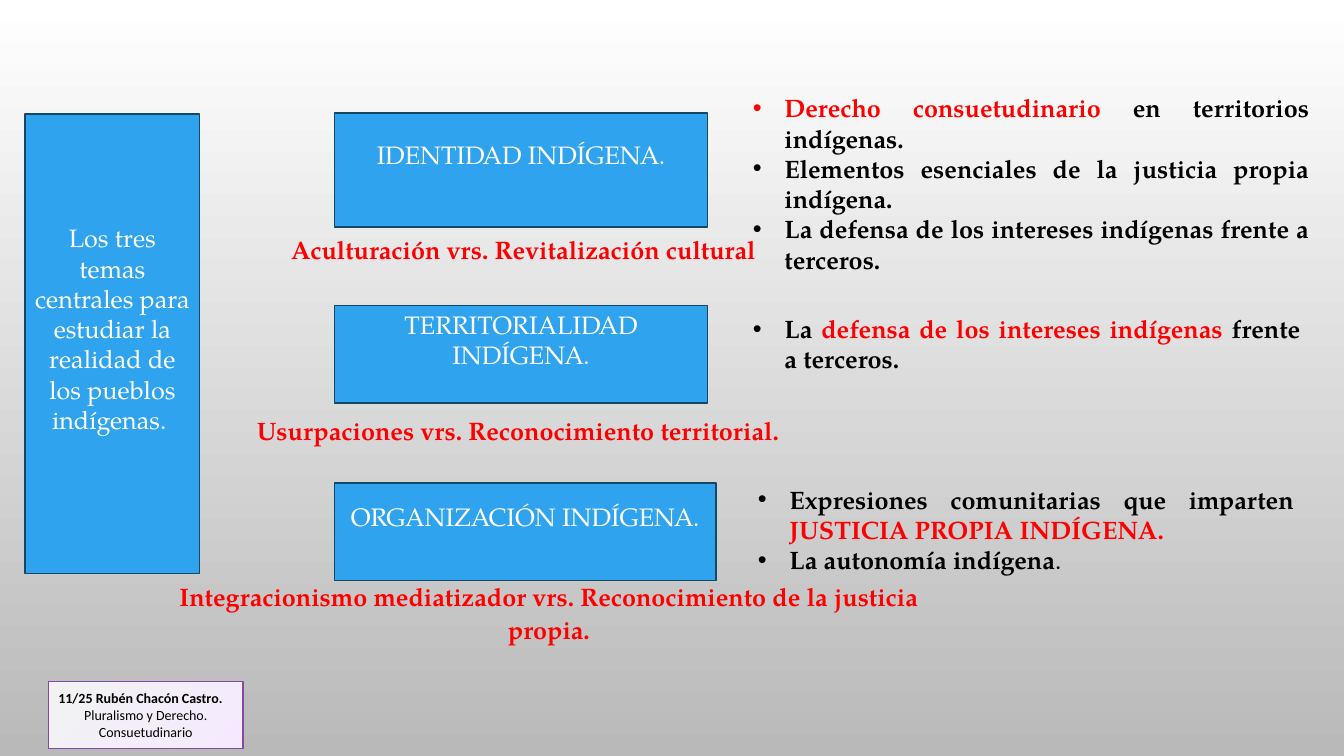
from lxml import etree
from pptx import Presentation
from pptx.dml.color import RGBColor
from pptx.enum.shapes import MSO_SHAPE
from pptx.enum.text import MSO_ANCHOR, MSO_AUTO_SIZE, PP_ALIGN
from pptx.oxml.ns import qn
from pptx.util import Pt

RECTANGLE = MSO_SHAPE.RECTANGLE
TOP, MIDDLE = MSO_ANCHOR.TOP, MSO_ANCHOR.MIDDLE
LEFT, CENTER, JUSTIFY = PP_ALIGN.LEFT, PP_ALIGN.CENTER, PP_ALIGN.JUSTIFY
NO_AUTOFIT = MSO_AUTO_SIZE.NONE

WHITE = RGBColor(0xFF, 0xFF, 0xFF)
BLACK = RGBColor(0, 0, 0)
RED = RGBColor(0xFF, 0, 0)
GRAY = RGBColor(0xB9, 0xB9, 0xB9)
BLUE = RGBColor(0x2F, 0xA3, 0xEE)
NAVY = RGBColor(0x15, 0x47, 0x68)
PALE_GRAY = RGBColor(0xF2, 0xF2, 0xF2)
LILAC = RGBColor(0xF4, 0xE9, 0xFF)
PURPLE = RGBColor(0x83, 0x4A, 0xA7)

SERIF, SANS = "TeX Gyre Pagella", "Calibri"
LINE_HEIGHT = 21.6  # one 18 pt line of the serif font
INDENT = 22.5


def add_runs(paragraph, runs, size=18, name=SERIF):
    for text, color, bold in runs:
        run = paragraph.add_run()
        run.text = text
        run.font.color.rgb = color
        for key, value in {"size": Pt(size), "name": name, "bold": bold}.items():
            setattr(run.font, key, value)


def set_gradient(fill, angle, colors):
    fill.gradient()
    fill.gradient_angle = angle
    for stop, color, position in zip(fill.gradient_stops, colors, (0, 1)):
        stop.color.rgb = color
        stop.position = position


presentation = Presentation()
presentation.slide_width, presentation.slide_height = Pt(960), Pt(540)
comparison_layout = presentation.slide_layouts[4]
slide = presentation.slides.add_slide(comparison_layout)
set_gradient(slide.background.fill, 270, (WHITE, GRAY))

# Bulleted lists on the right, in the body placeholders
lists = [
    (1, (530.6, 62.6, 411.8, 138.2), [
        [("Derecho consuetudinario ", RED, True),
         ("en territorios indígenas.", BLACK, True)],
        [("Elementos esenciales de la justicia propia indígena.", BLACK, True)],
        [("La defensa de los intereses indígenas frente a terceros.", BLACK, True)],
    ]),
    (2, (530.6, 220.3, 405.4, 51), [
        [("La ", BLACK, True),
         ("defensa de los intereses indígenas ", RED, True),
         ("frente a terceros.", BLACK, True)],
    ]),
    (3, (534.2, 342, 397.4, 72.7), [
        [("Expresiones comunitarias que imparten ", BLACK, True),
         ("JUSTICIA PROPIA INDÍGENA.", RED, True)],
        [("La autonomía indígena", BLACK, True), (".", BLACK, False)],
    ]),
]
placeholders = {shape.placeholder_format.idx: shape for shape in slide.placeholders}
for index, box, items in lists:
    shape = placeholders.pop(index)
    shape.left, shape.top, shape.width, shape.height = map(Pt, box)
    frame = shape.text_frame
    frame.auto_size = NO_AUTOFIT
    frame.vertical_anchor = TOP
    for number, runs in enumerate(items):
        paragraph = frame.paragraphs[0] if number == 0 else frame.add_paragraph()
        properties = paragraph._p.get_or_add_pPr()
        properties.set("marL", str(Pt(INDENT)))
        properties.set("indent", str(-Pt(INDENT)))
        etree.SubElement(properties, qn("a:buFont"), typeface="Arial")
        etree.SubElement(properties, qn("a:buChar"), char="•")
        paragraph.alignment = JUSTIFY
        paragraph.space_before = Pt(0)
        add_runs(paragraph, runs)
for unused in placeholders.values():
    unused.element.getparent().remove(unused.element)

# Blue boxes: main topic and the three themes
blue_boxes = [
    ((18, 81.4, 124.6, 328.3),
     "Los tres temas centrales para estudiar la realidad de los pueblos indígenas. "),
    ((239, 80.6, 266.4, 81.4), "IDENTIDAD INDÍGENA."),
    ((239, 218.2, 266.4, 69.8), "TERRITORIALIDAD INDÍGENA."),
    ((239, 344.9, 272.2, 69.8), "ORGANIZACIÓN INDÍGENA."),
]
for box, text in blue_boxes:
    shape = slide.shapes.add_shape(RECTANGLE, *map(Pt, box))
    shape.shadow.inherit = False
    shape.fill.solid()
    shape.fill.fore_color.rgb = BLUE
    shape.line.color.rgb = NAVY
    shape.line.width = Pt(1.25)
    frame = shape.text_frame
    frame.word_wrap = True
    frame.vertical_anchor = MIDDLE
    frame.margin_bottom = Pt(3.6 + LINE_HEIGHT)  # lifts the text half a line
    frame.paragraphs[0].alignment = CENTER
    add_runs(frame.paragraphs[0], [(text, WHITE, False)])

# Red captions under the themes
captions = [
    ((200.9, 162, 357.1, 29.5), LEFT, "Aculturación vrs. Revitalización cultural"),
    ((176.4, 291.6, 397.4, 29.5), LEFT, "Usurpaciones vrs. Reconocimiento territorial."),
    ((103.7, 410.4, 576.7, 53.3), CENTER,
     "Integracionismo mediatizador vrs. Reconocimiento de la justicia propia."),
]
for box, alignment, text in captions:
    frame = slide.shapes.add_textbox(*map(Pt, box)).text_frame
    frame.word_wrap = True
    paragraph = frame.paragraphs[0]
    paragraph.alignment = alignment
    paragraph.line_spacing = 1.07
    add_runs(paragraph, [(text, RED, True)])

# Author label
label = slide.shapes.add_shape(RECTANGLE, Pt(34.6), Pt(486.7), Pt(139), Pt(48.2))
label.shadow.inherit = False
set_gradient(label.fill, 315, (PALE_GRAY, LILAC))
label.line.color.rgb = PURPLE
label.line.width = Pt(0.75)
frame = label.text_frame
frame.word_wrap = True
frame.vertical_anchor = MIDDLE
author, course = frame.paragraphs[0], frame.add_paragraph()
author.alignment, course.alignment = LEFT, CENTER
add_runs(author, [("11/25 Rubén Chacón Castro.", BLACK, True)], 10, SANS)
add_runs(course, [("Pluralismo y Derecho. Consuetudinario", BLACK, False)], 10, SANS)

presentation.save("out.pptx")
